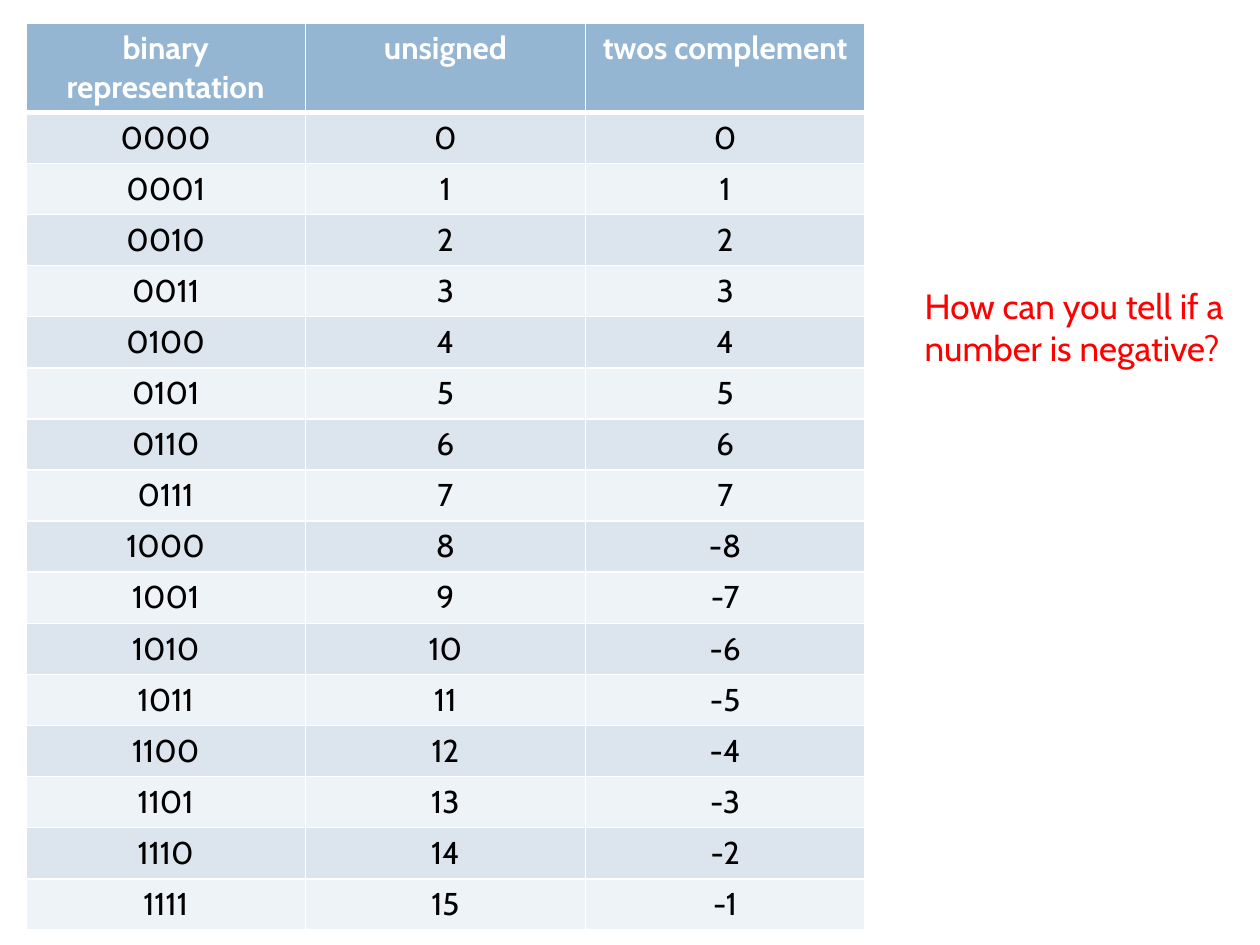
from lxml.etree import SubElement
from pptx import Presentation
from pptx.dml.color import RGBColor
from pptx.enum.text import MSO_AUTO_SIZE, PP_ALIGN
from pptx.oxml.ns import qn
from pptx.util import Cm, Pt

# Content: every 4-bit pattern with its two readings
BITS = 4
HEADINGS = ("binary representation", "unsigned", "twos complement")
QUESTION = "How can you tell if a number is negative?"

FONT = "Cabin"
WHITE = RGBColor(0xFF, 0xFF, 0xFF)
BLACK = RGBColor(0x00, 0x00, 0x00)
RED = RGBColor(0xFF, 0x00, 0x00)
HEADER_BLUE = RGBColor(0x94, 0xB6, 0xD2)
BANDS = (RGBColor(0xEE, 0xF3, 0xF7), RGBColor(0xDC, 0xE5, 0xEE))

COLUMN_WIDTH, ROW_HEIGHT, TABLE_HEIGHT = 5.64, 1.03, 18.26


def twos_complement(number):
    return number if number < 2 ** (BITS - 1) else number - 2 ** BITS


def style_text(text_frame, size, color, bold=False):
    for para in text_frame.paragraphs:
        for span in para.runs:
            span.font.name = FONT
            span.font.size = Pt(size)
            span.font.bold = bold
            span.font.color.rgb = color


def add_borders(cell, widths):
    """Draw white cell borders; widths are points for left, right, top, bottom."""
    properties = cell._tc.get_or_add_tcPr()
    for index, (side, width) in enumerate(zip(("lnL", "lnR", "lnT", "lnB"), widths)):
        line = properties.makeelement(qn(f"a:{side}"), {"w": str(Pt(width))})
        fill = SubElement(line, qn("a:solidFill"))
        SubElement(fill, qn("a:srgbClr"), val=str(WHITE))
        properties.insert(index, line)


deck = Presentation()
deck.slide_width, deck.slide_height = Cm(25.4), Cm(19.05)
page = deck.slides.add_slide(deck.slide_layouts[6])

# Table of number readings
rows = [HEADINGS] + [
    (f"{number:0{BITS}b}", str(number), str(twos_complement(number)))
    for number in range(2 ** BITS)
]
frame = page.shapes.add_table(
    len(rows), len(HEADINGS), Cm(0.52), Cm(0.46),
    Cm(COLUMN_WIDTH * len(HEADINGS)), Cm(ROW_HEIGHT * len(rows)))
frame.height = Cm(TABLE_HEIGHT)  # the two-line header grows beyond its row height

for row_index, row in enumerate(rows):
    is_header = row_index == 0
    for column_index, text in enumerate(row):
        cell = frame.table.cell(row_index, column_index)
        cell.text_frame.text = text
        cell.text_frame.paragraphs[0].alignment = PP_ALIGN.CENTER
        style_text(cell.text_frame, 18, WHITE if is_header else BLACK, is_header)
        cell.fill.solid()
        cell.fill.fore_color.rgb = HEADER_BLUE if is_header else BANDS[row_index % 2]
        top = 3 if row_index == 1 else 1
        bottom = 3 if is_header else 1
        add_borders(cell, (1, 1, top, bottom))

# Question beside the table
box = page.shapes.add_textbox(Cm(18.39), Cm(5.61), Cm(6.99), Cm(1.96))
box.text_frame.word_wrap = True
box.text_frame.auto_size = MSO_AUTO_SIZE.SHAPE_TO_FIT_TEXT
box.text_frame.text = QUESTION
style_text(box.text_frame, 20, RED)

deck.save("out.pptx")
